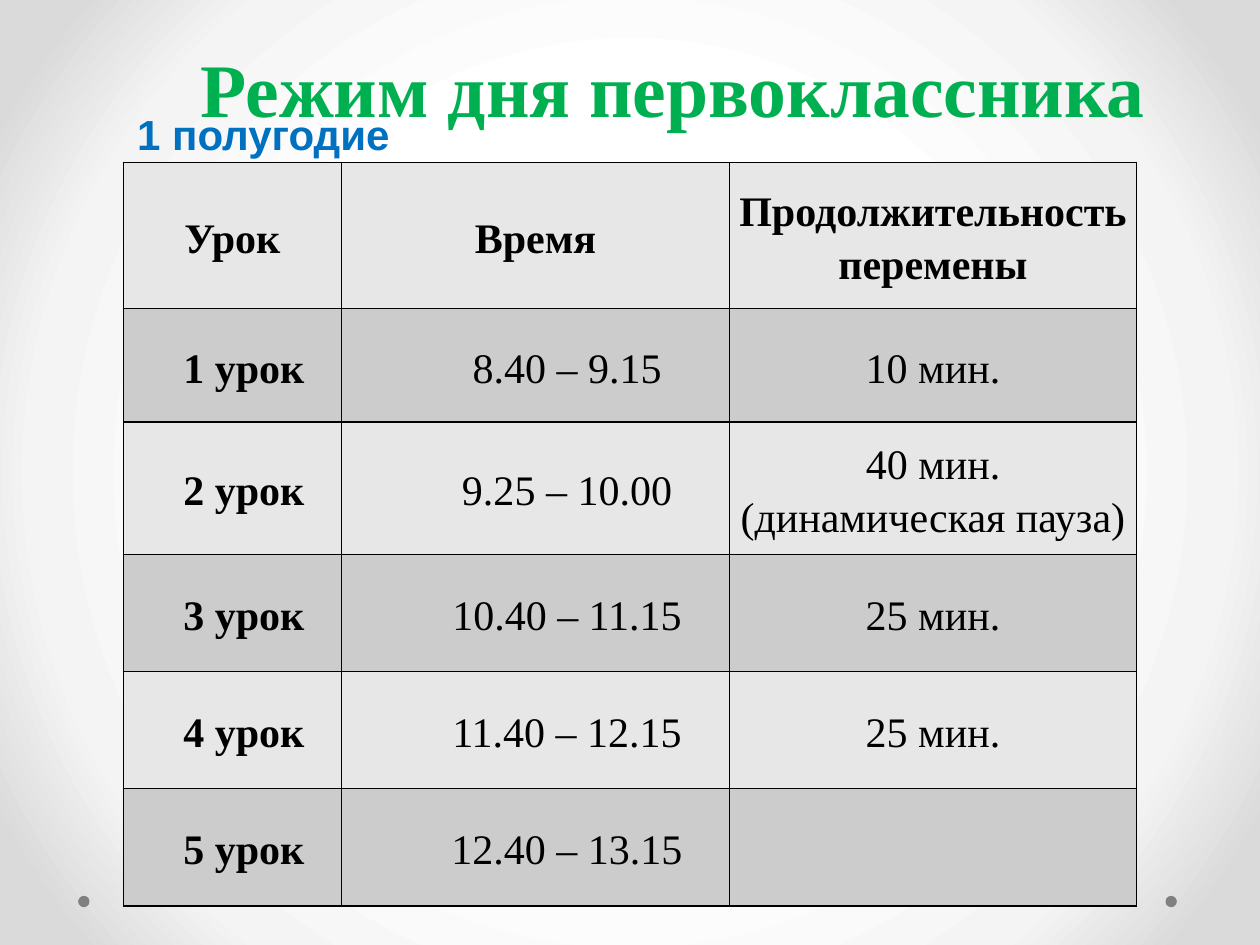
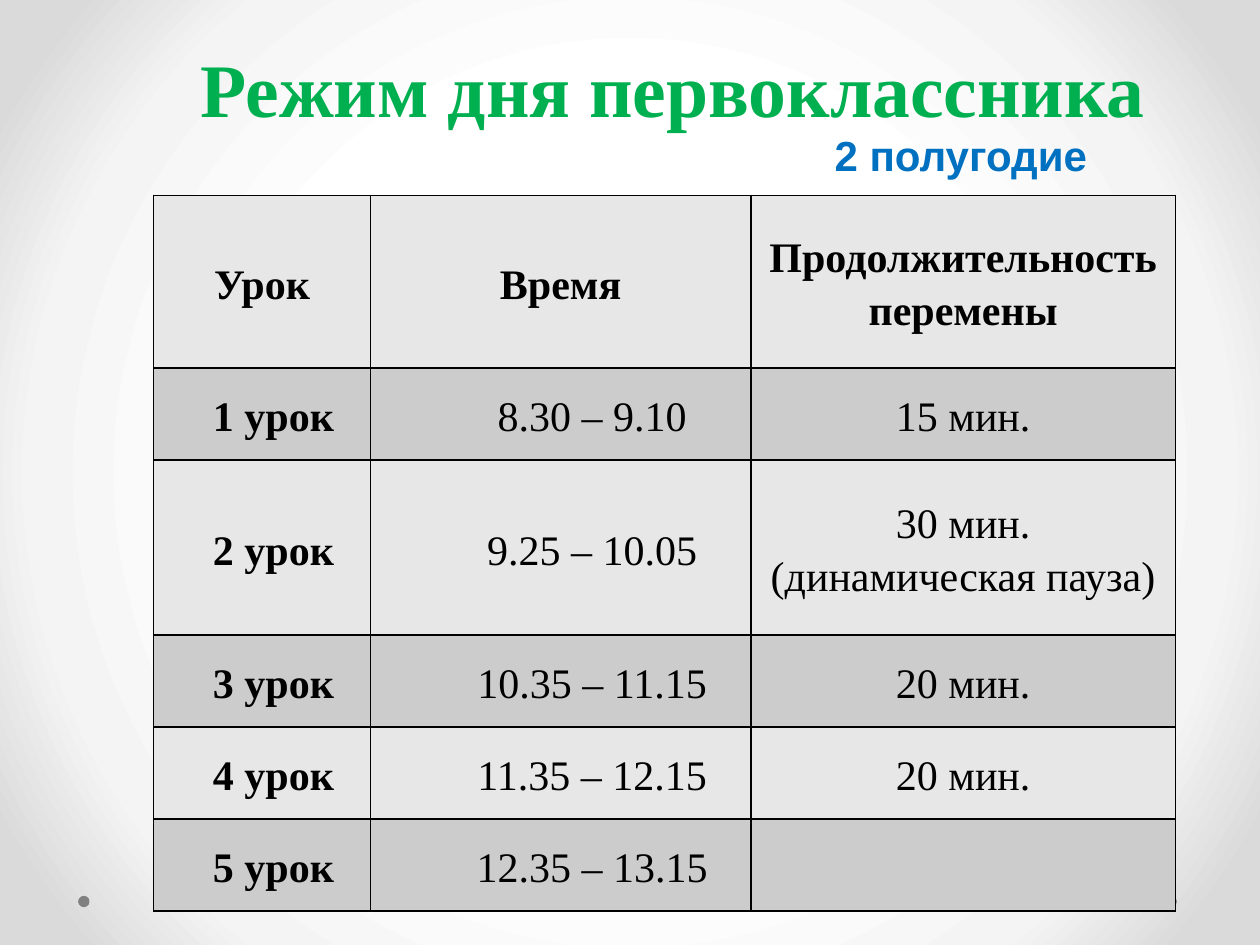
"""Builds two slides with the daily timetable of a first-grader."""
from lxml import etree
from pptx import Presentation
from pptx import util as u
from pptx.dml.color import RGBColor
from pptx.enum import shapes, text
from pptx.oxml import parse_xml
from pptx.oxml.ns import nsdecls, qn

PX = 9144
COLORS = {"title": "00B050", "term": "0070C0", "text": "000000", "dot": "808080",
          "light": "E7E7E7", "dark": "CCCCCC", "border": "000000"}
BACKGROUND = [(50, "FFFFFF"), (76, "F4F4F4"), (92, "DADADA")]
SERIF, SANS = "Times New Roman", "Arial"
HEADER = ("Урок", "Время", "Продолжительность перемены")
INDENTS = (18, 50, 0)

TERMS = [
    dict(term="1 полугодие", term_box=(20, 68, 378, 63), origin=(98, 129), inset=5,
         cols=(173, 308, 323), rows=(116, 90, 105, 93, 93, 93),
         times=("8.40 – 9.15", "9.25 – 10.00", "10.40 – 11.15", "11.40 – 12.15", "12.40 – 13.15"),
         breaks=("10 мин.", "40 мин. (динамическая пауза)", "25 мин.", "25 мин.", "")),
    dict(term="2 полугодие", term_box=(573, 85, 379, 63), origin=(122, 155), inset=6,
         cols=(172, 302, 337), rows=(137, 73, 139, 73, 73, 73),
         times=("8.30 – 9.10", "9.25 – 10.05", "10.35 – 11.15", "11.35 – 12.15", "12.35 – 13.15"),
         breaks=("15 мин.", "30 мин. (динамическая пауза)", "20 мин.", "20 мин.", "")),
]


class Deck:
    """Holds the presentation, its style and the current slide."""

    def __init__(self):
        self.prs = Presentation()
        self.prs.slide_width, self.prs.slide_height = self.px(1000), self.px(750)
        self.layout = self.prs.slide_layouts[1]
        self.s = None
        self.background()

    def px(self, n):
        return u.Emu(n * PX)

    def color(self, name):
        return RGBColor.from_string(COLORS[name])

    def background(self):
        stops = "".join(f'<a:gs pos="{pos * 1000}"><a:srgbClr val="{c}"/></a:gs>'
                        for pos, c in BACKGROUND)
        bg = parse_xml(
            f'<p:bg {nsdecls("p", "a")}><p:bgPr><a:gradFill><a:gsLst>{stops}</a:gsLst>'
            '<a:path path="circle"><a:fillToRect l="50000" t="50000" r="50000" b="50000"/></a:path>'
            '</a:gradFill><a:effectLst/></p:bgPr></p:bg>')
        c_sld = self.prs.slide_master.element.find(qn("p:cSld"))
        for old in c_sld.findall(qn("p:bg")):
            c_sld.remove(old)
        c_sld.insert(0, bg)

    def slide(self):
        first = self.s is None
        self.s = self.prs.slides.add_slide(self.layout)
        if first:
            for i, x in enumerate((62, 925)):
                self.layout_dot(x, 711, 100 + i)

    def layout_dot(self, x, y, shape_id):
        sp = self.s.shapes.add_shape(shapes.MSO_SHAPE.OVAL, *map(self.px, (x, y, 9, 9)))
        sp.shadow.inherit = False
        sp.fill.solid()
        sp.fill.fore_color.rgb = self.color("dot")
        sp.line.fill.background()
        sp.element.nvSpPr.cNvPr.set("id", str(shape_id))
        self.layout.shapes.element.append(sp.element)

    def run(self, p, words, size, font, color, bold):
        r = p.add_run()
        r.text = words
        r.font.size, r.font.name, r.font.bold = u.Pt(size), font, bold
        r.font.color.rgb = self.color(color)

    def placeholder(self, sp, box):
        sp.left, sp.top, sp.width, sp.height = map(self.px, box)
        tf = sp.text_frame
        tf.auto_size = text.MSO_AUTO_SIZE.NONE
        tf.word_wrap = True
        tf.vertical_anchor = text.MSO_ANCHOR.BOTTOM
        p = tf.paragraphs[0]
        p.alignment = text.PP_ALIGN.CENTER
        return p

    def title(self, words):
        p = self.placeholder(self.s.shapes.title, (123, -12, 822, 122))
        p.line_spacing = u.Pt(58)
        self.run(p, words, 43.2, SERIF, "title", True)

    def term(self, words, box):
        p = self.placeholder(self.s.placeholders[1], box)
        ppr = p._p.get_or_add_pPr()
        ppr.set("marL", "0")
        ppr.set("indent", "0")
        etree.SubElement(ppr, qn("a:buNone"))
        self.run(p, words, 24, SANS, "term", True)

    def borders(self, cell):
        tcpr = cell._tc.get_or_add_tcPr()
        for i, side in enumerate("LRTB"):
            tcpr.insert(i, parse_xml(
                f'<a:ln{side} {nsdecls("a")} w="12700"><a:solidFill>'
                f'<a:srgbClr val="{COLORS["border"]}"/></a:solidFill></a:ln{side}>'))

    def cell(self, cell, words, fill, inset, indent, bold):
        cell.fill.solid()
        cell.fill.fore_color.rgb = self.color(fill)
        cell.margin_left = cell.margin_right = self.px(inset)
        cell.margin_top = cell.margin_bottom = 0
        cell.vertical_anchor = text.MSO_ANCHOR.MIDDLE
        self.borders(cell)
        if words:
            p = cell.text_frame.paragraphs[0]
            p.alignment = text.PP_ALIGN.CENTER
            p.line_spacing = 1.15
            p._p.get_or_add_pPr().set("indent", str(self.px(indent)))
            self.run(p, words, 24, SERIF, "text", bold)

    def table(self, grid, origin, cols, rows, inset):
        box = (*origin, sum(cols), sum(rows))
        table = self.s.shapes.add_table(len(rows), len(cols), *map(self.px, box)).table
        for col, width in zip(table.columns, cols):
            col.width = self.px(width)
        for i, (row, height) in enumerate(zip(table.rows, rows)):
            row.height = self.px(height)
            for j, words in enumerate(grid[i]):
                self.cell(table.cell(i, j), words, "dark" if i % 2 else "light", inset,
                          INDENTS[j] if i else 0, i == 0 or j == 0)


def main():
    deck = Deck()
    for t in TERMS:
        lessons = [(f"{n} урок", time, pause)
                   for n, (time, pause) in enumerate(zip(t["times"], t["breaks"]), 1)]
        deck.slide()
        deck.title("Режим дня первоклассника")
        deck.term(t["term"], t["term_box"])
        deck.table([HEADER, *lessons], t["origin"], t["cols"], t["rows"], t["inset"])
    deck.prs.save("out.pptx")


if __name__ == "__main__":
    main()
